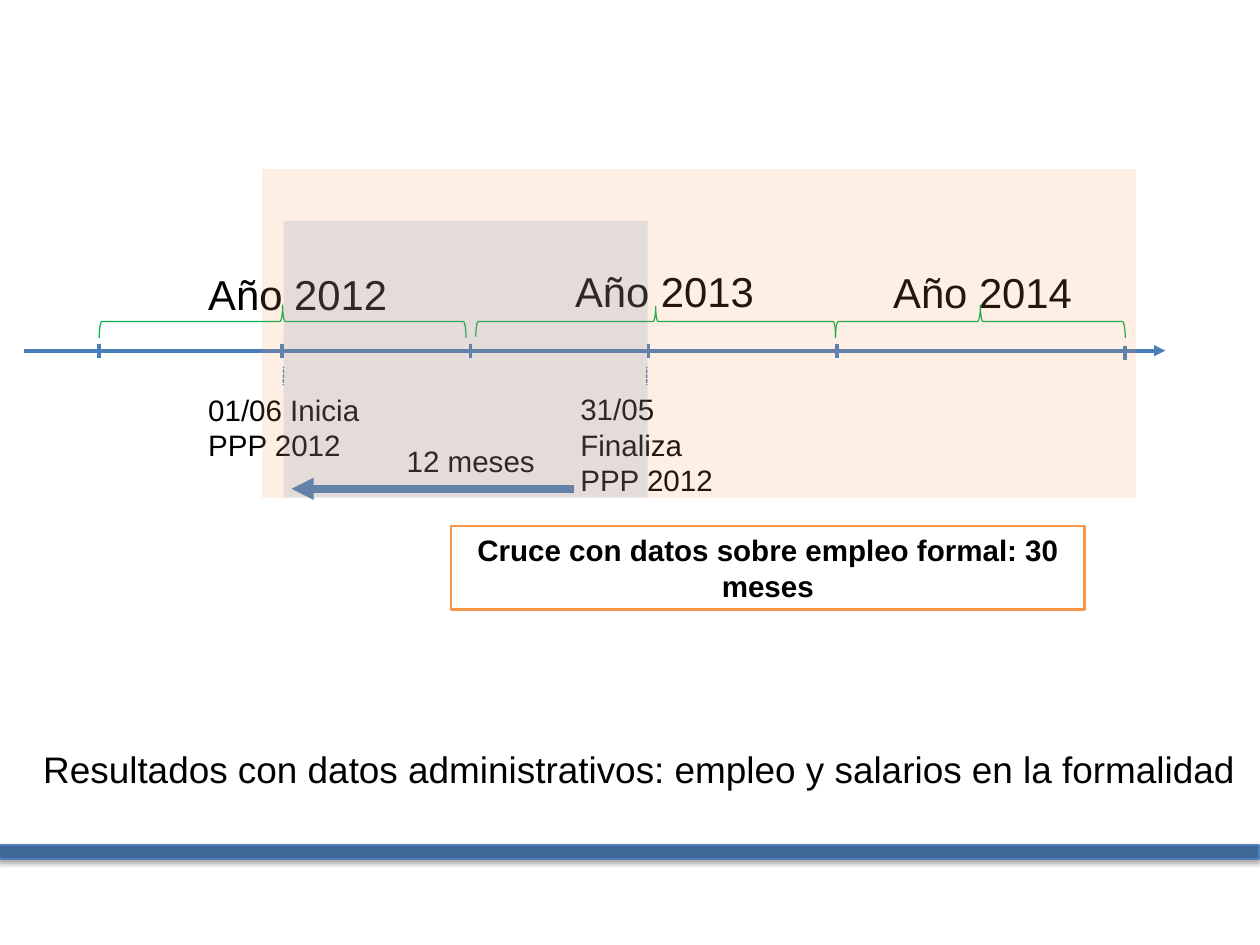
import pptx
import pptx.util
import pptx.dml.color
import pptx.enum.dml
import pptx.enum.shapes
import pptx.enum.text
import pptx.oxml
import pptx.oxml.ns

Inches, Pt = pptx.util.Inches, pptx.util.Pt
RGBColor = pptx.dml.color.RGBColor
KIND = pptx.enum.shapes.MSO_SHAPE
ANCHOR = pptx.enum.text.MSO_ANCHOR
ALIGN = pptx.enum.text.PP_ALIGN
DASH = pptx.enum.dml.MSO_LINE

BLACK = RGBColor(0, 0, 0)
WHITE = RGBColor(255, 255, 255)
AXIS = RGBColor(0x4A, 0x7E, 0xBB)
BLUE = RGBColor(0x4F, 0x81, 0xBD)
NAVY = RGBColor(0x3F, 0x67, 0x97)
ORANGE = RGBColor(0xF7, 0x96, 0x46)
GREEN = RGBColor(0, 0xB0, 0x50)


def add_xml(parent, tag, attrs=""):
    """Append a drawing element and return it."""
    space = pptx.oxml.ns.nsdecls("a")
    child = pptx.oxml.parse_xml(f"<a:{tag} {space} {attrs}/>")
    parent.append(child)
    return child


def add_line(slide, start, end, weight, dash=None, ends=()):
    """Draw a straight line with optional dashes and arrowheads."""
    points = [Inches(n) for n in (*start, *end)]
    line = slide.shapes.add_connector(pptx.enum.shapes.MSO_CONNECTOR.STRAIGHT, *points)
    line.line.color.rgb = AXIS
    line.line.width = Pt(weight)
    if dash:
        line.line.dash_style = dash
    for end_tag in ends:
        add_xml(line.line._get_or_add_ln(), end_tag, 'type="triangle"')
    add_xml(line._element.spPr, "effectLst")


def add_shape(slide, kind, box, fill=None, edge=None, weight=1, alpha=None):
    """Draw a preset shape with a flat fill and outline."""
    shape = slide.shapes.add_shape(kind, *[Inches(n) for n in box])
    shape.shadow.inherit = False
    if fill is None:
        shape.fill.background()
    else:
        shape.fill.solid()
        shape.fill.fore_color.rgb = fill
    if alpha:
        color = shape._element.spPr.find(".//" + pptx.oxml.ns.qn("a:srgbClr"))
        add_xml(color, "alpha", f'val="{alpha * 1000}"')
    if edge is None:
        shape.line.fill.background()
    else:
        shape.line.color.rgb = edge
        shape.line.width = Pt(weight)
    return shape


def set_text(shape, text, size, align=ALIGN.LEFT, anchor=ANCHOR.TOP, wrap=True, bold=False):
    """Write one paragraph into a shape."""
    frame = shape.text_frame
    frame.word_wrap = wrap
    frame.vertical_anchor = anchor
    frame.margin_left = frame.margin_right = Inches(0.07)
    frame.margin_top = frame.margin_bottom = Inches(0.07)
    para = frame.paragraphs[0]
    para.text = text
    para.alignment = align
    para.font.name = "Arial"
    para.font.size = Pt(size)
    para.font.bold = bold
    para.font.color.rgb = BLACK


def add_text(slide, box, text, size, **style):
    """Place a plain text box."""
    set_text(slide.shapes.add_textbox(*[Inches(n) for n in box]), text, size, **style)


def add_brace(slide, left, mid, width, height):
    """Draw a flat brace whose point faces up."""
    box = (left + (width - height) / 2, mid - width / 2, height, width)
    brace = add_shape(slide, KIND.RIGHT_BRACE, box, edge=GREEN)
    brace.rotation = 270


def add_axis(slide, left, top, width):
    """Draw the time axis with its ticks, years and braces."""
    add_line(slide, (left, top), (left + width, top), 3, ends=["tailEnd"])
    ticks = [(0.85, 0), (2.91, 0), (5.04, 0), (7.05, 0), (9.18, 0), (12.43, 0.03)]
    for step, drop in ticks:
        x, y = left + step, top + drop
        add_line(slide, (x, y - 0.08), (x, y + 0.08), 3)
    years = [("Año 2012", 2.01, 1.0), ("Año 2013", 6.15, 1.03), ("Año 2014", 9.74, 1.02)]
    for year, step, rise in years:
        add_text(slide, (left + step, top - rise, 2.18, 0.67), year, 34, wrap=False)
    for step, span, height in [(0.85, 4.14, 0.37), (5.1, 4.06, 0.34), (9.16, 3.27, 0.37)]:
        add_brace(slide, left + step, top - 0.33, span, height)


def add_program(slide, left, top, width):
    """Draw the program span with its start and end notes."""
    y = top + 1.36
    add_line(slide, (left + 0.11, y), (left + width - 0.08, y), 6, ends=["headEnd", "tailEnd"])
    add_text(slide, (left + 1.34, top + 0.77, 1.9, 0.52), "12 meses", 24)
    notes = [("01/06 Inicia PPP 2012", 0, 0.02, 0.9, 0.91),
             ("31/05 Finaliza PPP 2012", width, 0.01, 0.81, 1.3)]
    for text, step, lean, shift, height in notes:
        x = left + step
        add_line(slide, (x, top + 1.1), (x + lean, top - 0.02), 1, dash=DASH.SQUARE_DOT)
        note = add_shape(slide, KIND.RECTANGLE, (x - shift, top + 0.19, 1.9, height), WHITE)
        set_text(note, text, 24)


def add_panels(slide, left, top, width, height):
    """Lay the two tinted periods over the time axis."""
    add_shape(slide, KIND.RECTANGLE, (left + 0.24, top + 0.58, 4.11, height - 0.58), BLUE, alpha=17)
    add_shape(slide, KIND.RECTANGLE, (left, top, width, height), ORANGE, alpha=15)


def add_match(slide, *box):
    """Add the outlined note about the data match."""
    note = add_shape(slide, KIND.RECTANGLE, box, edge=ORANGE, weight=2)
    set_text(note, "Cruce con datos sobre empleo formal: 30 meses", 24,
             align=ALIGN.CENTER, bold=True)


def add_footer(slide, left, top, width):
    """Add the closing headline and the shaded bar below it."""
    add_text(slide, (left + 0.39, top, 13.69, 1.16),
             "Resultados con datos administrativos: empleo y salarios en la formalidad",
             30, align=ALIGN.CENTER, anchor=ANCHOR.MIDDLE)
    bar = add_shape(slide, KIND.RECTANGLE, (left, top + 1.44, width, 0.16), NAVY, BLUE, 2)
    effects = bar._element.spPr.find(pptx.oxml.ns.qn("a:effectLst"))
    shadow = add_xml(effects, "outerShdw",
                     f'blurRad="{Pt(4)}" dist="{Pt(2)}" dir="5400000" rotWithShape="0"')
    color = add_xml(shadow, "srgbClr", 'val="000000"')
    add_xml(color, "alpha", 'val="35000"')


def main():
    """Build the slide and save it."""
    deck = pptx.Presentation()
    deck.slide_width, deck.slide_height = Inches(14.22), Inches(10.67)
    slide = deck.slides.add_slide(deck.slide_layouts[6])
    add_axis(slide, 0.27, 3.96, 12.88)
    add_program(slide, 3.18, 4.16, 4.11)
    add_panels(slide, 2.96, 1.91, 9.86, 3.71)
    add_match(slide, 5.09, 5.94, 7.15, 0.94)
    add_footer(slide, -0.02, 8.1, 14.23)
    deck.save("out.pptx")


if __name__ == "__main__":
    main()
